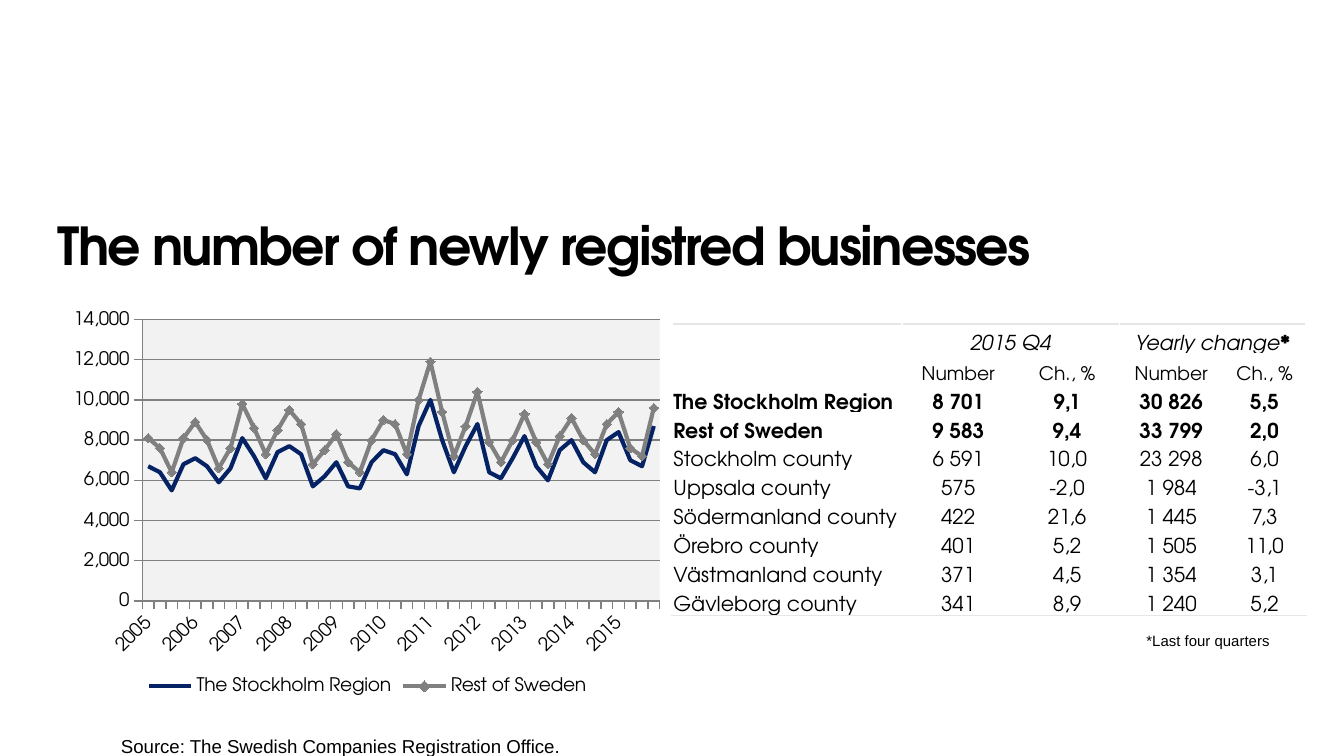
from lxml import etree
from pptx import Presentation
from pptx import util as u
from pptx.chart.data import CategoryChartData
from pptx.dml.color import RGBColor
from pptx.enum import chart as ch, text as t
from pptx.oxml import parse_xml
from pptx.oxml.ns import nsdecls, qn

PX = 4572
BLACK = RGBColor(0, 0, 0)
NAVY = RGBColor(0x05, 0x23, 0x64)
GREY = RGBColor(0x80, 0x80, 0x80)
PALE = RGBColor(0xF2, 0xF2, 0xF2)
RULE = RGBColor(0xE6, 0xE6, 0xE6)

HEADS = [["", "2015 Q4", "", "Yearly change", ""],
         ["", "Number", "Ch., %", "Number", "Ch., %"]]
ROWS = [["The Stockholm Region", "8 701", "9,1", "30 826", "5,5"],
        ["Rest of Sweden", "9 583", "9,4", "33 799", "2,0"],
        ["Stockholm county", "6 591", "10,0", "23 298", "6,0"],
        ["Uppsala county", "575", "-2,0", "1 984", "-3,1"],
        ["Södermanland county", "422", "21,6", "1 445", "7,3"],
        ["Örebro county", "401", "5,2", "1 505", "11,0"],
        ["Västmanland county", "371", "4,5", "1 354", "3,1"],
        ["Gävleborg county", "341", "8,9", "1 240", "5,2"]]
REGION = [6700, 6400, 5500, 6800, 7100, 6700, 5900, 6600, 8100, 7200, 6100,
          7400, 7700, 7300, 5700, 6200, 6900, 5700, 5600, 6900, 7500, 7300,
          6300, 8700, 10000, 8000, 6400, 7700, 8800, 6400, 6100, 7100, 8200,
          6700, 6000, 7500, 8000, 6900, 6400, 8000, 8400, 7000, 6700, 8700]
REST = [8100, 7600, 6400, 8100, 8900, 8000, 6600, 7600, 9800, 8600, 7300,
        8500, 9500, 8800, 6800, 7500, 8300, 6900, 6400, 8000, 9000, 8800,
        7300, 10000, 11900, 9400, 7200, 8700, 10400, 7900, 6900, 8000, 9300,
        7900, 6800, 8200, 9100, 8000, 7300, 8800, 9400, 7600, 7200, 9600]


def px(*vals):
    return [u.Emu(v * PX) for v in vals]


class Deck:
    """Holds the style and the current slide."""

    face = "TeX Gyre Adventor"
    plain = "Arial"

    def __init__(self, wide, high):
        self.prs = Presentation()
        self.prs.slide_width, self.prs.slide_height = px(wide, high)
        self.slide = self.prs.slides.add_slide(self.prs.slide_layouts[5])

    def style(self, font, size, face=None, bold=False, slant=False):
        font.name, font.size = face or self.face, u.Pt(size)
        font.bold, font.italic = bold, slant
        font.color.rgb = BLACK

    def frame(self, shape, words):
        box = shape.text_frame
        box.text = words
        box.word_wrap, box.auto_size = True, t.MSO_AUTO_SIZE.NONE
        box.vertical_anchor = t.MSO_ANCHOR.TOP
        box.margin_left = box.margin_right = 0
        box.margin_top = box.margin_bottom = 0
        para = box.paragraphs[0]
        para.alignment = t.PP_ALIGN.LEFT
        return para

    def title(self, words, *area):
        shape = self.slide.shapes.title
        shape.left, shape.top, shape.width, shape.height = px(*area)
        run = self.frame(shape, words).runs[0]
        self.style(run.font, 28, bold=True)
        run.font._element.set("spc", "-90")

    def note(self, words, size, *area):
        shape = self.slide.shapes.add_textbox(*px(*area))
        para = self.frame(shape, words)
        para.line_spacing = u.Pt(24)
        self.style(para.runs[0].font, size, self.plain)

    def edge(self, cell, side):
        cell._tc.get_or_add_tcPr().insert(0, parse_xml(
            f'<a:{side} {nsdecls("a")} w="12700"><a:solidFill>'
            f'<a:srgbClr val="{RULE}"/></a:solidFill></a:{side}>'))

    def cell(self, cell, words, size, bold, slant, left):
        cell.fill.background()
        cell.vertical_anchor = t.MSO_ANCHOR.BOTTOM
        cell.margin_left, cell.margin_right, cell.margin_top = px(2, 2, 2)
        cell.margin_bottom = 0
        para = cell.text_frame.paragraphs[0]
        para.alignment = t.PP_ALIGN.LEFT if left else t.PP_ALIGN.CENTER
        if words:
            para.text = words
            self.style(para.runs[0].font, size, bold=bold, slant=slant)
        else:
            etree.SubElement(para._p, qn("a:endParaRPr"), sz=str(size * 100))

    def table(self, rows, cols, highs, *area):
        grid = self.slide.shapes.add_table(len(rows), len(cols), *px(*area)).table
        grid.first_row = grid.horz_banding = False
        for col, wide in zip(grid.columns, px(*cols)):
            col.width = wide
        for row, high in zip(grid.rows, px(*highs)):
            row.height = high
        for r, row in enumerate(rows):
            for c, words in enumerate(row):
                cell = grid.cell(r, c)
                self.cell(cell, words, 10 if r == 1 else 11,
                          r in (2, 3), r == 0, c == 0)
                if r == 0:
                    self.edge(cell, "lnT")
                if r == len(rows) - 1:
                    self.edge(cell, "lnB")
        for c in (1, 3):
            grid.cell(0, c).merge(grid.cell(0, c + 1))
        star = grid.cell(0, 3).text_frame.paragraphs[0].add_run()
        star.text = "*"
        self.style(star.font, 11, bold=True)

    def chart(self, cats, lines, *area):
        data = CategoryChartData(number_format="#,##0")
        data.categories = cats
        for name, vals, _, _ in lines:
            data.add_series(name, vals)
        chart = self.slide.shapes.add_chart(
            ch.XL_CHART_TYPE.LINE_MARKERS, *px(*area), data).chart
        self.style(chart.font, 10)
        chart.has_title = False
        chart.has_legend = True
        chart.legend.position = ch.XL_LEGEND_POSITION.BOTTOM
        chart.legend.include_in_layout = False
        plot = chart.plots[0]
        plot.vary_by_categories = False
        for ser, (_, _, hue, mark) in zip(plot.series, lines):
            ser.smooth = False
            ser.format.line.color.rgb = hue
            ser.format.line.width = u.Pt(2.25)
            ser.marker.style = mark
            ser.marker.size = 5
            ser.marker.format.fill.solid()
            ser.marker.format.fill.fore_color.rgb = hue
            ser.marker.format.line.color.rgb = hue
        self.axes(chart)
        self.plot(chart)

    def axes(self, chart):
        cat, val = chart.category_axis, chart.value_axis
        val.minimum_scale, val.maximum_scale, val.major_unit = 0, 14000, 2000
        val.has_major_gridlines = True
        val.tick_labels.number_format = "#,##0"
        val.tick_labels.number_format_is_linked = False
        for item in (cat, val, val.major_gridlines):
            item.format.line.color.rgb = GREY
            item.format.line.width = u.Pt(0.75)
        for axis in (cat, val):
            axis.major_tick_mark = ch.XL_TICK_MARK.OUTSIDE
            axis.minor_tick_mark = ch.XL_TICK_MARK.NONE
            self.style(axis.tick_labels.font, 10)
        root = cat._element
        root.find(qn("c:txPr")).find(qn("a:bodyPr")).set("rot", "-2700000")
        last = root.find(qn("c:noMultiLvlLbl"))
        for tag, step in (("tickLblSkip", 4), ("tickMarkSkip", 1)):
            last.addprevious(parse_xml(f'<c:{tag} {nsdecls("c")} val="{step}"/>'))

    def plot(self, chart):
        area = chart._chartSpace.chart.plotArea
        for old in area.findall(qn("c:layout")):
            area.remove(old)
        spots = "".join(f'<c:{k} val="{v}"/>' for k, v in (
            ("layoutTarget", "inner"), ("xMode", "edge"), ("yMode", "edge"),
            ("x", 0.13), ("y", 0.04), ("w", 0.85), ("h", 0.71)))
        area.insert(0, parse_xml(
            f'<c:layout {nsdecls("c")}><c:manualLayout>{spots}'
            '</c:manualLayout></c:layout>'))
        area.append(parse_xml(
            f'<c:spPr {nsdecls("c", "a")}><a:solidFill>'
            f'<a:srgbClr val="{PALE}"/></a:solidFill></c:spPr>'))


def main():
    deck = Deck(2000, 1125)
    deck.title("The number of newly registred businesses", 86, 318, 1580, 160)
    deck.note("Source: The Swedish Companies Registration Office.", 10,
              180, 1060, 700, 84)
    deck.note("*Last four quarters", 8, 1706, 900, 200, 200)
    deck.table(HEADS + ROWS, [342, 168, 156, 154, 124],
               [45] * 2 + [43] * 8, 1000, 482, 944, 434)
    cats = [str(2005 + q // 4) if q % 4 == 0 else "" for q in range(len(REST))]
    deck.chart(cats, [
        ("The Stockholm Region", REGION, NAVY, ch.XL_MARKER_STYLE.NONE),
        ("Rest of Sweden", REST, GREY, ch.XL_MARKER_STYLE.DIAMOND),
    ], 94, 452, 906, 590)
    deck.prs.save("out.pptx")


if __name__ == "__main__":
    main()
